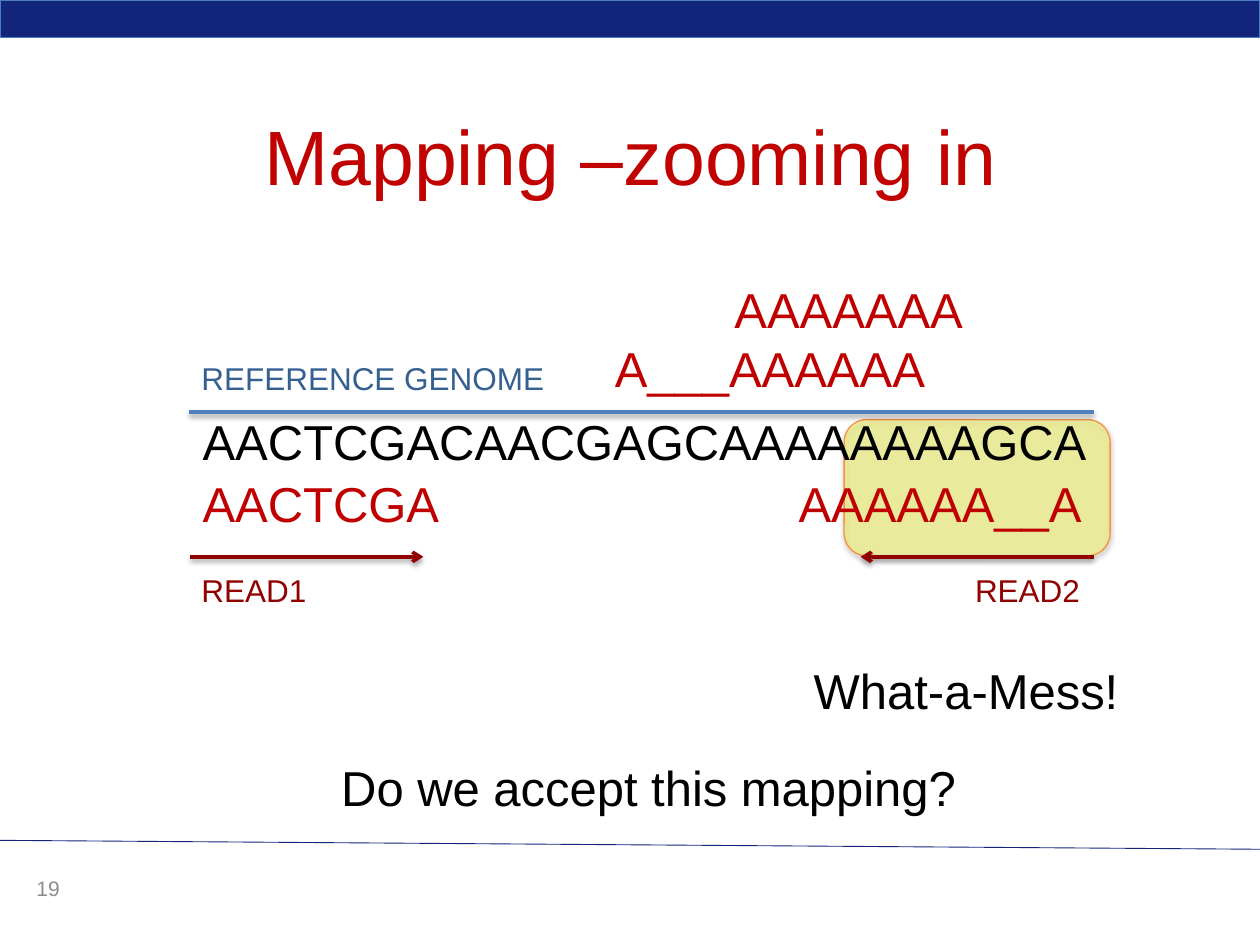
from dataclasses import dataclass

from lxml import etree
from pptx import Presentation
from pptx.dml.color import RGBColor
from pptx.enum.shapes import MSO_CONNECTOR, MSO_SHAPE as Shape
from pptx.enum.text import PP_ALIGN as Align
from pptx.oxml.ns import qn
from pptx.slide import Slide
from pptx.util import Pt

COLORS = {
    "navy": "13257B", "band edge": "4B7EBC", "yellow": "FFFF00", "orange": "F69240",
    "genome": "4F81BD", "genome label": "376092", "read": "900100", "title": "C00200",
    "mapped": "C00000", "black": "000000", "grey": "8C8C8C",
}


@dataclass
class SlideBuilder:
    """Draws styled elements on the current slide, with lengths in points."""
    slide: Slide
    font: str = "Arial"

    def color(self, name):
        return RGBColor.from_string(COLORS[name])

    def shadow(self, effects):
        outer = etree.SubElement(effects, qn("a:outerShdw"), blurRad=str(Pt(3.1)),
                                 dist=str(Pt(1.6)), dir="5400000", rotWithShape="0")
        black = etree.SubElement(outer, qn("a:srgbClr"), val=COLORS["black"])
        etree.SubElement(black, qn("a:alpha"), val="38000")

    def box(self, kind, left, top, width, height, fill, edge, opacity=None):
        box = self.slide.shapes.add_shape(kind, Pt(left), Pt(top), Pt(width), Pt(height))
        box.shadow.inherit = False
        box.fill.solid()
        box.fill.fore_color.rgb = self.color(fill)
        box.line.color.rgb = self.color(edge)
        box.line.width = Pt(0.75)
        if opacity is not None:
            properties = box._element.spPr
            fill_color = properties.find(qn("a:solidFill")).find(qn("a:srgbClr"))
            etree.SubElement(fill_color, qn("a:alpha"), val=str(opacity * 1000))
            self.shadow(properties.find(qn("a:effectLst")))

    def line(self, start, end, color, width=2, arrow=False, shadow=True):
        line = self.slide.shapes.add_connector(MSO_CONNECTOR.STRAIGHT, *map(Pt, start + end))
        line.line.color.rgb = self.color(color)
        line.line.width = Pt(width)
        properties = line._element.spPr
        if arrow:
            etree.SubElement(properties.find(qn("a:ln")), qn("a:tailEnd"), type="arrow")
        effects = etree.SubElement(properties, qn("a:effectLst"))
        if shadow:
            self.shadow(effects)

    def text(self, words, left, top, width, height, size, color, align=Align.LEFT, wrap=False):
        frame = self.slide.shapes.add_textbox(Pt(left), Pt(top), Pt(width), Pt(height)).text_frame
        frame.word_wrap = wrap
        frame.text = words
        paragraph = frame.paragraphs[0]
        paragraph.alignment = align
        font = paragraph.runs[0].font
        font.name = self.font
        font.size = Pt(size)
        font.color.rgb = self.color(color)


def main():
    deck = Presentation()
    deck.slide_width, deck.slide_height = Pt(720), Pt(540)
    page = SlideBuilder(deck.slides.add_slide(deck.slide_layouts[6]))

    page.box(Shape.RECTANGLE, 0, 0, 720, 21.6, "navy", "band edge")
    page.line((720, 485.3), (0, 480.2), "navy", width=0.5, shadow=False)
    page.box(Shape.ROUNDED_RECTANGLE, 482.4, 239.8, 152, 77.8, "yellow", "orange", opacity=30)

    genome_left, genome_right, genome_y, read_y, read_length = 108, 625, 235.4, 318.2, 133.2
    page.line((genome_left, genome_y), (genome_right, genome_y), "genome")
    for start, end in ((genome_right, genome_right - read_length),
                       (genome_left + 0.7, genome_left + 0.7 + read_length)):
        page.line((start, read_y), (end, read_y), "read", arrow=True)

    page.text("Mapping –zooming in", 46.1, 58.3, 628.6, 90, 44, "title", Align.CENTER, wrap=True)
    for words, left, top, width, color in (
        ("AACTCGACAACGAGCAAAAAAAAGCA", 108.7, 231.8, 524.2, "black"),
        ("AACTCGA", 108.7, 267.1, 151.2, "mapped"),
        ("AAAAAA__A", 449.3, 267.1, 177.8, "mapped"),
        ("What-a-Mess!", 457.9, 373.7, 190.8, "black"),
        ("Do we accept this mapping?", 187.9, 429.1, 370.1, "black"),
        ("AAAAAAA", 412.6, 156.2, 146.2, "mapped"),
        ("A___AAAAAA", 344.2, 190.1, 193.7, "mapped"),
    ):
        page.text(words, left, top, width, 41, 28, color)
    for words, left, top, width, color in (
        ("REFERENCE GENOME", genome_left, 201.6, 212.4, "genome label"),
        ("READ1", genome_left, 322.6, 74.9, "read"),
        ("READ2", 550.1, 322.6, 74.9, "read"),
    ):
        page.text(words, left, top, width, 28.8, 18, color)
    page.text("19", 13.7, 496.8, 32.4, 28.8, 12, "grey", wrap=True)

    deck.save("out.pptx")


if __name__ == "__main__":
    main()
